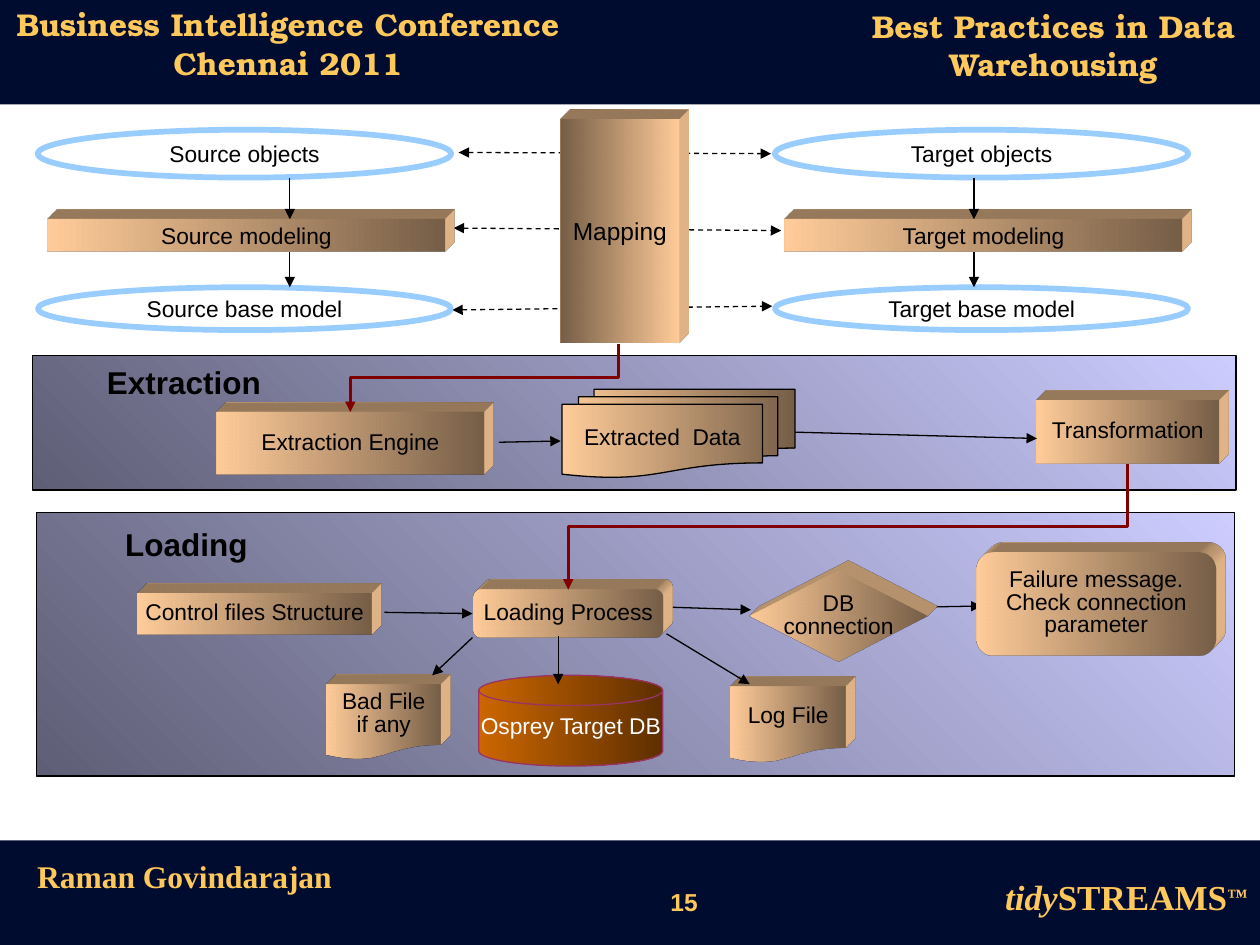
import lxml.etree
import pptx
import pptx.dml.color
import pptx.enum.dml
import pptx.enum.shapes
import pptx.enum.text
import pptx.oxml
import pptx.oxml.ns
import pptx.util

Inches, Pt = pptx.util.Inches, pptx.util.Pt
KIND = pptx.enum.shapes.MSO_SHAPE
LINK = pptx.enum.shapes.MSO_CONNECTOR
ANCHOR = pptx.enum.text.MSO_ANCHOR
CENTER = pptx.enum.text.PP_ALIGN.CENTER
NS = pptx.oxml.ns.nsdecls("a")

NAVY, GOLD, BLACK, WHITE = "000B30", "FFC85B", "000000", "FFFFFF"
SKY, RED, PLUM = "99CCFF", "800000", "993366"
TAN, RUST, DUSK = ("FFCC99", "765E47"), ("CC6600", "5E2F00"), ("5E5E76", "CCCCFF")
SERIF, ROMAN, SANS = "TeX Gyre Bonum", "Times New Roman", "Arial"
W, H = 10, 7.5

# Bands and panels: left, top, width, height
BANDS = [(0, 0, W, 0.83), (0, 6.67, W, 0.83)]
PANELS = [(0.26, 2.82, 9.55, 1.07), (0.29, 4.07, 9.51, 2.09)]

# Model columns: name, left edge, offset of the down arrows
COLS = [("Source", 0.3, 2), ("Target", 6.15, 1.58)]
# Model rows: suffix, top, height, is a bar
ROWS = [("objects", 1.03, 0.38, False), ("modeling", 1.74, 0.26, True),
        ("base model", 2.28, 0.34, False)]
COL_W, BAR_W, BAR_IN = 3.28, 3.15, 0.08

# Solid boxes: lines of text, kind, place
BLOCKS = [
    (["Extraction Engine"], KIND.RECTANGLE, (1.72, 3.27, 2.12, 0.5)),
    (["Transformation"], KIND.RECTANGLE, (8.23, 3.18, 1.44, 0.5)),
    (["Control files Structure"], KIND.RECTANGLE, (1.09, 4.71, 1.86, 0.33)),
    (["Loading Process"], KIND.FLOWCHART_ALTERNATE_PROCESS, (3.76, 4.68, 1.5, 0.38)),
    (["DB", "connection"], KIND.FLOWCHART_DECISION, (5.95, 4.53, 1.41, 0.72)),
    (["Failure message.", "Check connection", "parameter"],
     KIND.FLOWCHART_ALTERNATE_PROCESS, (7.75, 4.38, 1.9, 0.82)),
    (["Log File"], KIND.FLOWCHART_DOCUMENT, (5.8, 5.45, 0.91, 0.6)),
    (["Bad File", "if any"], KIND.FLOWCHART_DOCUMENT, (2.59, 5.43, 0.91, 0.6)),
]
# Arrows: from x, from y, to x, to y
MAPS = [(3.64, 1.21, 6.12, 1.22), (3.6, 1.81, 6.2, 1.83), (3.59, 2.46, 6.13, 2.43)]
FAIL = (7.23, 4.82, 7.79, 4.81)
FLOWS = [(3.96, 3.51, 4.45, 3.5), (6.31, 3.43, 8.23, 3.48), (3.05, 4.86, 3.75, 4.87),
         (5.34, 4.82, 5.96, 4.84), (3.75, 5.06, 3.43, 5.36), (4.43, 5.05, 4.43, 5.43),
         (5.29, 5.03, 5.95, 5.43)]
BENDS = [(4.91, 2.73, 2.78, 3.27), (8.95, 3.68, 4.51, 4.68)]

DEPTH = f"""<r {NS}><a:scene3d><a:camera prst="legacyObliqueTopRight"/>
<a:lightRig rig="legacyFlat3" dir="b"/></a:scene3d>
<a:sp3d extrusionH="201600" prstMaterial="legacyMatte">
<a:bevelT w="13500" h="13500" prst="angle"/><a:bevelB w="13500" h="13500" prst="angle"/>
<a:extrusionClr><a:srgbClr val="FFCC99"/></a:extrusionClr></a:sp3d></r>"""


def color(code):
    return pptx.dml.color.RGBColor.from_string(code)


def write(shape, lines, size, ink=BLACK, face=SANS, bold=False, wrap=False,
          anchor=ANCHOR.MIDDLE, pitch=None):
    frame = shape.text_frame
    frame.text = "\n".join(lines)
    frame.word_wrap = wrap
    frame.auto_size = pptx.enum.text.MSO_AUTO_SIZE.NONE
    frame.vertical_anchor = anchor
    for para in frame.paragraphs:
        para.alignment = CENTER
        para.line_spacing = pitch
        for run in para.runs:
            font = run.font
            font.size, font.bold, font.name = Pt(size), bold, face
            font.color.rgb = color(ink)
    return frame


def label(slide, place, lines, size, **style):
    box = slide.shapes.add_textbox(*map(Inches, place))
    return write(box, lines, size, **style)


def block(slide, kind, place, fill, edge=None, width=0.75, tilt=0, deep=False):
    """Add a shape; a pair of fills makes a gradient, deep extrudes it."""
    shape = slide.shapes.add_shape(kind, *map(Inches, place))
    shape.shadow.inherit = False
    if isinstance(fill, tuple):
        shape.fill.gradient()
        shape.fill.gradient_angle = tilt
        for stop, code in zip(shape.fill.gradient_stops, fill):
            stop.color.rgb = color(code)
    else:
        shape.fill.solid()
        shape.fill.fore_color.rgb = color(fill)
    if edge:
        shape.line.color.rgb = color(edge)
        shape.line.width = Pt(width)
    else:
        shape.line.fill.background()
    if deep:
        for part in list(pptx.oxml.parse_xml(DEPTH)):
            shape._element.spPr.append(part)
    return shape


def arrow(slide, ends, ink=BLACK, width=0.75, both=False, kind=LINK.STRAIGHT):
    """Add an arrow; both puts a head on each end and dashes the line."""
    link = slide.shapes.add_connector(kind, *map(Inches, ends))
    link.line.color.rgb = color(ink)
    link.line.width = Pt(width)
    if both:
        link.line.dash_style = pptx.enum.dml.MSO_LINE.DASH
    line = link.line._get_or_add_ln()
    for tag in ["a:headEnd", "a:tailEnd"] if both else ["a:tailEnd"]:
        lxml.etree.SubElement(line, pptx.oxml.ns.qn(tag), type="triangle")
    lxml.etree.SubElement(link._element.spPr, pptx.oxml.ns.qn("a:effectLst"))
    return link


def bend(slide, ends):
    """Add an elbow that leaves downwards: a sideways one, turned by 90 degrees."""
    x1, y1, x2, y2 = ends
    mid_x, mid_y = (x1 + x2) / 2, (y1 + y2) / 2
    half_w, half_h = (y2 - y1) / 2, (x1 - x2) / 2
    box = (mid_x - half_w, mid_y - half_h, mid_x + half_w, mid_y + half_h)
    link = arrow(slide, box, RED, 1.75, kind=LINK.ELBOW)
    link._element.spPr.find(pptx.oxml.ns.qn("a:xfrm")).set("rot", "5400000")


def frame_page(slide):
    for place in BANDS:
        block(slide, KIND.RECTANGLE, place, NAVY)
    title = slide.shapes.title
    title.left, title.top, title.width, title.height = map(Inches, (6.75, 0.21, 3.22, 0.5))
    write(title, ["Best Practices in Data Warehousing"], 18, GOLD, SERIF, True, True,
          ANCHOR.BOTTOM)
    slide.shapes._spTree.append(title._element)
    gold = dict(ink=GOLD, bold=True, wrap=True, anchor=ANCHOR.TOP)
    event = label(slide, (-0.06, 0.1, 4.69, 0.61),
                  ["Business Intelligence Conference", "Chennai 2011"], 18,
                  face=SERIF, pitch=0.6, **gold)
    event.paragraphs[1].space_before = Pt(9)
    label(slide, (0, 6.75, 2.93, 0.57), ["Raman Govindarajan"], 18, face=ROMAN, **gold)
    label(slide, (5.21, 6.99, 0.44, 0.33), ["15"], 14, **gold)
    firm = label(slide, (7.78, 6.9, 2.32, 0.26), ["tidy"], 20, face=ROMAN, **gold)
    para = firm.paragraphs[0]
    para.runs[0].font.italic = True
    for text in ("STREAMS", "™"):
        run = para.add_run()
        run.text = text
        run.font.size, run.font.bold, run.font.name = Pt(20), True, ROMAN
        run.font.color.rgb = color(GOLD)
    run.font._element.set("baseline", "20000")


def draw_models(slide):
    for ends in MAPS:
        arrow(slide, ends, both=True)
    core = block(slide, KIND.RECTANGLE, (4.45, 0.95, 0.94, 1.77), TAN[::-1], deep=True)
    write(core, ["Mapping"], 14)
    for name, left, shift in COLS:
        for suffix, top, high, bar in ROWS:
            if bar:
                place = (left + BAR_IN, top, BAR_W, high)
                shape = block(slide, KIND.RECTANGLE, place, TAN, deep=True)
            else:
                shape = block(slide, KIND.OVAL, (left, top, COL_W, high), WHITE, SKY, 3.25)
            write(shape, [f"{name} {suffix}"], 13)
        for upper, lower in zip(ROWS, ROWS[1:]):
            x = left + shift
            arrow(slide, (x, upper[1] + upper[2], x, lower[1]))


def draw_flow(slide):
    for place in PANELS:
        block(slide, KIND.RECTANGLE, place, DUSK, BLACK, tilt=45)
    arrow(slide, FAIL)
    for lines, kind, place in BLOCKS:
        write(block(slide, kind, place, TAN, deep=True), lines, 13, pitch=0.82)
    data = block(slide, KIND.FLOWCHART_MULTIDOCUMENT, (4.46, 3.09, 1.85, 0.7), TAN, BLACK)
    write(data, ["Extracted  Data"], 13, pitch=0.82)
    disk = block(slide, KIND.FLOWCHART_MAGNETIC_DISK, (3.8, 5.36, 1.46, 0.72), RUST, PLUM)
    write(disk, ["Osprey Target DB"], 13, WHITE, pitch=0.82)
    for ends in FLOWS:
        arrow(slide, ends)
    for ends in BENDS:
        bend(slide, ends)
    label(slide, (0.75, 2.88, 1.42, 0.35), ["Extraction"], 18, bold=True, pitch=0.82)
    label(slide, (0.86, 4.17, 1.24, 0.35), ["Loading"], 18, bold=True, pitch=0.82)


def main():
    deck = pptx.Presentation()
    deck.slide_width, deck.slide_height = Inches(W), Inches(H)
    slide = deck.slides.add_slide(deck.slide_layouts[5])
    frame_page(slide)
    draw_models(slide)
    draw_flow(slide)
    deck.save("out.pptx")


if __name__ == "__main__":
    main()
